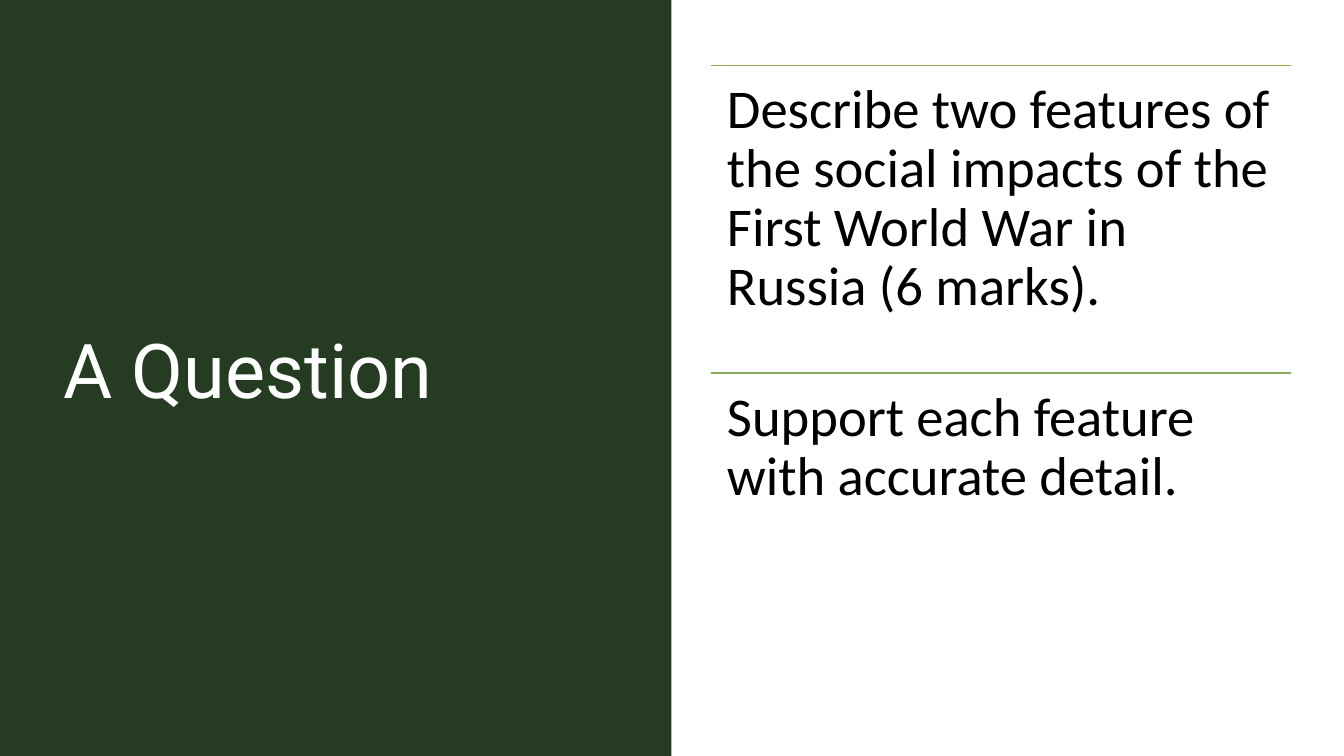
"""Build the exam question slide."""
from dataclasses import dataclass

from lxml.etree import SubElement
from pptx import Presentation
from pptx.dml.color import RGBColor
from pptx.enum.shapes import MSO_CONNECTOR, MSO_SHAPE
from pptx.enum.text import MSO_ANCHOR, MSO_AUTO_SIZE, PP_ALIGN
from pptx.oxml.ns import qn
from pptx.slide import Slide
from pptx.text.text import TextFrame
from pptx.util import Inches, Pt

GREEN = RGBColor(0x25, 0x3C, 0x22)
WHITE = RGBColor(0xFF, 0xFF, 0xFF)
BLACK = RGBColor(0x00, 0x00, 0x00)
OLIVE = RGBColor(0xA0, 0xA6, 0x46)
MOSS = RGBColor(0x86, 0xAB, 0x5C)

LEFT, TOP, WIDTH, STEP = 7.05, 0.65, 5.75, 3.05
INSET = Inches(0.16)


@dataclass
class Task:
    text: str
    color: RGBColor


TASKS = [
    Task("Describe two features of the social impacts of the "
         "First World War in Russia (6 marks).", OLIVE),
    Task("Support each feature with accurate detail.", MOSS),
]


def write(frame: TextFrame, text: str, face: str, size: int, color: RGBColor) -> None:
    frame.word_wrap = True
    frame.auto_size = MSO_AUTO_SIZE.NONE
    line = frame.paragraphs[0]
    line.alignment = PP_ALIGN.LEFT
    line.line_spacing = 0.9
    run = line.add_run()
    run.text = text
    run.font.name = face
    run.font.size = Pt(size)
    run.font.color.rgb = color


def add_panel(slide: Slide) -> None:
    panel = slide.shapes.add_shape(
        MSO_SHAPE.RECTANGLE, 0, 0, Inches(6.66), Inches(7.5))
    panel.shadow.inherit = False
    panel.fill.solid()
    panel.fill.fore_color.rgb = GREEN
    panel.line.fill.background()


def add_title(slide: Slide) -> None:
    title = slide.shapes.title
    title.left, title.top = Inches(0.53), Inches(0.53)
    title.width, title.height = Inches(5.55), Inches(6.36)
    title.text_frame.vertical_anchor = MSO_ANCHOR.MIDDLE
    write(title.text_frame, "A Question", "Roboto", 54, WHITE)
    slide.shapes.element.append(title.element)


def add_task(slide: Slide, task: Task, top: float) -> None:
    x, y, w = Inches(LEFT), Inches(top), Inches(WIDTH)
    rule = slide.shapes.add_connector(MSO_CONNECTOR.STRAIGHT, x, y, x + w, y)
    rule.line.color.rgb = task.color
    rule.line.width = Pt(1)
    SubElement(rule.element.spPr, qn("a:effectLst"))
    frame = slide.shapes.add_textbox(x, y, w, Inches(STEP)).text_frame
    frame.margin_left = frame.margin_right = INSET
    frame.margin_top = frame.margin_bottom = INSET
    write(frame, task.text, "Calibri", 39, BLACK)


def main() -> None:
    deck = Presentation()
    deck.slide_width, deck.slide_height = Inches(13.33), Inches(7.5)
    slide = deck.slides.add_slide(deck.slide_layouts.get_by_name("Title Only"))
    slide.background.fill.solid()
    slide.background.fill.fore_color.rgb = WHITE
    add_panel(slide)
    add_title(slide)
    for i, task in enumerate(TASKS):
        add_task(slide, task, TOP + i * STEP)
    deck.save("out.pptx")


if __name__ == "__main__":
    main()
